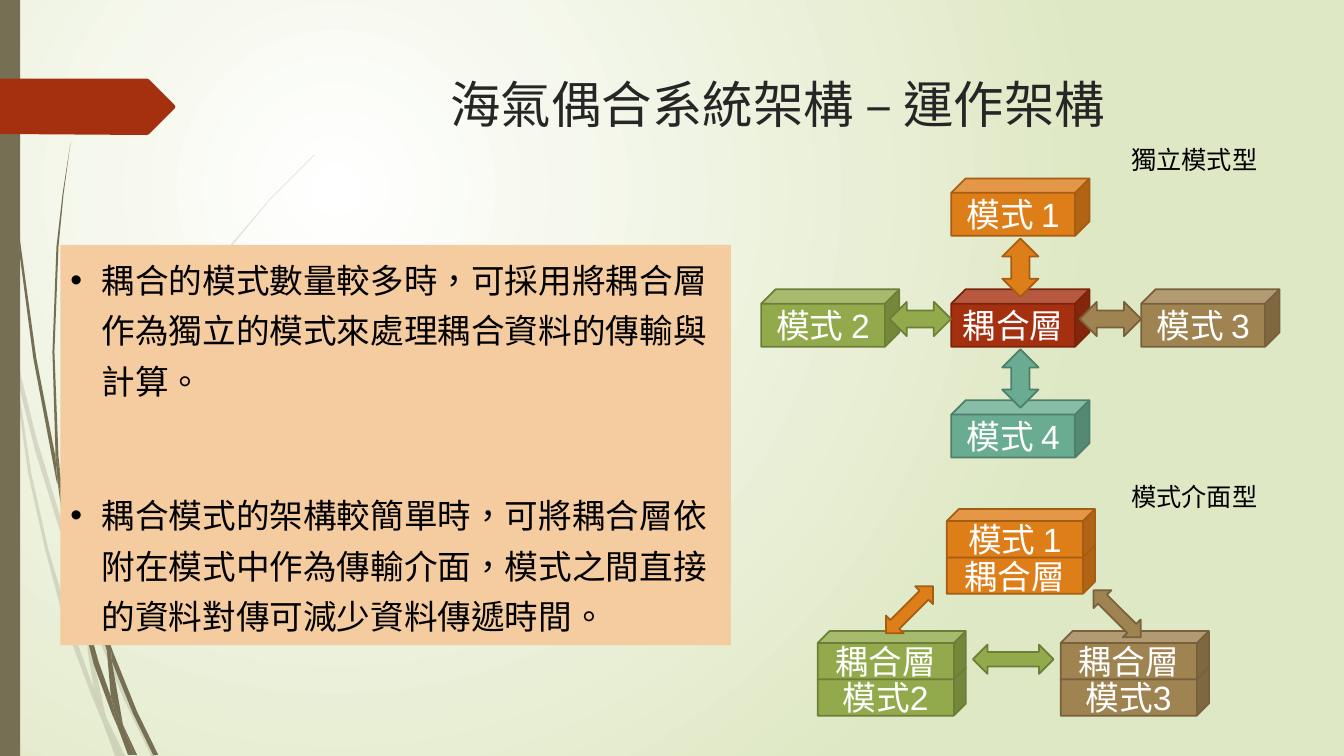
from lxml import etree
from pptx import Presentation
from pptx.dml.color import RGBColor
from pptx.enum.shapes import MSO_SHAPE
from pptx.enum.text import MSO_ANCHOR, PP_ALIGN
from pptx.oxml.ns import qn
from pptx.util import Inches, Pt

CUBE, ARROW, RECTANGLE = MSO_SHAPE.CUBE, MSO_SHAPE.LEFT_RIGHT_ARROW, MSO_SHAPE.RECTANGLE
TOP, MIDDLE = MSO_ANCHOR.TOP, MSO_ANCHOR.MIDDLE
LEFT, CENTER = PP_ALIGN.LEFT, PP_ALIGN.CENTER

# Fill and outline of each model
ORANGE, GREEN, BROWN = ("DE7E18", "A45D12"), ("92AA4C", "6C7E38"), ("9F8351", "76613C")
TEAL, RED = ("6AAC91", "4E7F6B"), ("A53010", "7A240C")
GRASS = "766F54"

# Outlines of the grass blades and the flag, in inches
PALE_BLADES = [
    [(0.11, 3.5), (0.09, 3.22), (0, 2.82), (0, 2.99), (0.1, 3.44)],
    [(0.58, 5.22), (0.84, 5.99), (0.85, 5.86), (0.62, 5.2), (0.36, 4.34), (0.14, 3.45),
     (0.17, 3.76), (0.35, 4.48)],
    [(0.92, 6.07), (0.88, 5.96), (0.88, 6.1), (1.23, 6.94), (1.5, 7.5), (1.55, 7.5), (1.27, 6.92)],
    [(1.19, 7.5), (1.24, 7.5), (1.05, 7.11)],
    [(0.93, 6.83), (0.7, 6.19), (0.48, 5.45), (0.31, 4.69), (0.17, 3.76), (0.11, 3.5), (0.28, 4.7),
     (0.45, 5.46), (0.65, 6.21), (0.92, 6.93), (1.01, 7.14), (0.99, 7.07)],
    [(0.84, 5.99), (0.87, 6.46), (0.93, 6.83), (0.96, 6.92), (1.05, 7.11), (0.91, 6.46),
     (0.88, 6.08)],
    [(0.88, 5.84), (0.95, 5.22), (1.1, 4.62), (1.32, 4.04), (1.6, 3.49), (2.29, 2.45),
     (2.68, 1.98), (3.12, 1.54), (3.12, 1.53), (2.68, 1.97), (2.28, 2.44), (1.58, 3.48),
     (1.3, 4.03), (1.07, 4.61), (0.91, 5.22), (0.85, 5.84), (0.88, 5.96)],
    [(1.01, 7.14), (1.14, 7.5), (1.19, 7.5)],
    [(0.96, 6.92), (0.93, 6.83), (0.99, 7.07), (1.01, 7.14), (1.19, 7.5), (1.05, 7.11)],
]
DARK_BLADES = [
    [(0.07, 1.1), (0.17, 2.33), (0.33, 3.55), (0.56, 4.77), (0.57, 4.81), (0.55, 4.53),
     (0.36, 3.55), (0.19, 2.32), (0.08, 1.09), (0.05, 0.48), (0.04, 0), (0.03, 0), (0.04, 0.48)],
    [(0.88, 5.92), (1.06, 6.45), (1.06, 6.31), (0.93, 5.9), (0.75, 5.32), (0.6, 4.72), (0.64, 5.05)],
    [(1.13, 6.49), (1.1, 6.41), (1.11, 6.56), (1.32, 7.08), (1.52, 7.49), (1.57, 7.49), (1.36, 7.06)],
    [(1.1, 6.91), (0.98, 6.57), (0.84, 6.07), (0.72, 5.56), (0.64, 5.05), (0.57, 4.77),
     (0.68, 5.57), (0.8, 6.08), (0.93, 6.59), (1.11, 7.08), (1.17, 7.22), (1.16, 7.17)],
    [(0.6, 4.72), (0.58, 4.53), (0.54, 3.49), (0.58, 2.45), (0.63, 1.93), (0.7, 1.41),
     (0.62, 1.93), (0.56, 2.45), (0.52, 3.49), (0.55, 4.49)],
    [(1.33, 7.49), (1.36, 7.49), (1.22, 7.19)],
    [(0.57, 4.77), (0.64, 5.05), (0.6, 4.72), (0.55, 4.49), (0.55, 4.53)],
    [(1.11, 6.33), (1.15, 5.92), (1.25, 5.52), (1.58, 4.76), (2.05, 4.06), (2.31, 3.74),
     (2.61, 3.44), (2.6, 3.44), (2.31, 3.73), (2.04, 4.05), (1.56, 4.74), (1.22, 5.51),
     (1.11, 5.91), (1.06, 6.31), (1.1, 6.41)],
    [(1.17, 7.22), (1.27, 7.49), (1.31, 7.49)],
    [(1.06, 6.45), (1.1, 6.91), (1.16, 7.06), (1.22, 7.19), (1.11, 6.56), (1.09, 6.51)],
    [(1.06, 6.45), (1.11, 6.56), (1.1, 6.41), (1.06, 6.31)],
    [(1.16, 7.06), (1.1, 6.91), (1.17, 7.22), (1.3, 7.49), (1.33, 7.49), (1.22, 7.19)],
]
FLAG = [(0, 0.78), (1.46, 0.78), (1.48, 0.79), (1.73, 1.04), (1.74, 1.06), (1.73, 1.08),
        (1.48, 1.33), (1.46, 1.34), (0, 1.33)]

def color(hex_string):
    return RGBColor.from_string(hex_string)

def set_text(shape, *paragraphs, size=24, font="Arial", fill="FFFFFF", align=CENTER,
             anchor=MIDDLE, margins=(0.1, 0.05)):
    frame = shape.text_frame
    frame.word_wrap = True
    frame.vertical_anchor = anchor
    frame.margin_left = frame.margin_right = Inches(margins[0])
    frame.margin_top = frame.margin_bottom = Inches(margins[1])
    frame.text = "\n".join(paragraphs)
    for paragraph in frame.paragraphs:
        paragraph.alignment = align
        run = paragraph.runs[0]
        run.font.size, run.font.name = Pt(size), font
        run.font.color.rgb = color(fill)
        run._r.get_or_add_rPr().set("lang", "zh-TW")
    return frame

def paint(shape, fill, line=None):
    shape.shadow.inherit = False
    shape.fill.solid()
    shape.fill.fore_color.rgb = color(fill)
    if line:
        shape.line.color.rgb = color(line)
        shape.line.width = Pt(1.25)
    else:
        shape.line.fill.background()

def add_preset(slide, kind, box, fill, line=None):
    shape = slide.shapes.add_shape(kind, *map(Inches, box))
    paint(shape, fill, line)
    return shape

def add_outline(slide, points, fill, opacity=None):
    # Points are placed on a grid of hundredths of an inch
    grid = [(round(x * 100), round(y * 100)) for x, y in points]
    builder = slide.shapes.build_freeform(*grid[0], scale=Inches(0.01))
    builder.add_line_segments(grid[1:], close=True)
    shape = builder.convert_to_shape()
    paint(shape, fill)
    if opacity:
        tint = next(shape._element.spPr.iter(qn("a:srgbClr")))
        etree.SubElement(tint, qn("a:alpha"), val=str(opacity * 1000))

def add_cube(slide, box, text, colors):
    set_text(add_preset(slide, CUBE, box, *colors), text, margins=(0, 0))

def add_arrow(slide, center, size, colors, rotation=0):
    box = (center[0] - size[0] / 2, center[1] - size[1] / 2, *size)
    add_preset(slide, ARROW, box, *colors).rotation = rotation

def add_label(slide, box, text):
    label = slide.shapes.add_textbox(*map(Inches, box))
    set_text(label, text, size=18, fill="000000", anchor=TOP)

def add_backdrop(slide):
    # Round gradient spreading from the upper left
    fill = slide.background.fill
    fill.gradient()
    for stop, position, tint in zip(fill.gradient_stops, (0, 1), ("FFFFFF", "DFE8C4")):
        stop.position, stop.color.rgb = position, color(tint)
    gradient = next(slide._element.iter(qn("a:gradFill")))
    circle = etree.Element(qn("a:path"), path="circle")
    etree.SubElement(circle, qn("a:fillToRect"), l="50000", t="50000", r="100000", b="100000")
    gradient.replace(gradient.find(qn("a:lin")), circle)
    # Grass, side band and flag
    for blades, opacity in ((PALE_BLADES, 20), (DARK_BLADES, None)):
        for blade in blades:
            add_outline(slide, blade, GRASS, opacity)
    add_preset(slide, RECTANGLE, (0, 0, 0.2, 7.5), GRASS)
    add_outline(slide, FLAG, RED[0])

def add_title(slide, box, text):
    title = slide.shapes.title
    title.left, title.top, title.width, title.height = map(Inches, box)
    set_text(title, text, size=36, font="Quicksand", fill="262626", anchor=TOP)

def add_explanation(slide, box, *points):
    panel = add_preset(slide, RECTANGLE, box, "F5CBA0")
    frame = set_text(panel, *points, fill="000000", align=LEFT, anchor=TOP)
    for paragraph, gap in zip(frame.paragraphs, (12, 60)):
        paragraph.line_spacing, paragraph.space_before = 1.25, Pt(gap)
        properties = paragraph._p.get_or_add_pPr()
        properties.set("marL", str(Inches(0.31)))
        properties.set("indent", str(-Inches(0.31)))
        etree.SubElement(properties, qn("a:buFont"), typeface="Arial")
        etree.SubElement(properties, qn("a:buChar"), char="•")

def add_hub_diagram(slide, box):
    left, top, width, height = box
    cube_width, cube_height = 1.37, 0.57
    step_x, step_y = (width - cube_width) / 2, (height - cube_height) / 2
    models = [("模式 2", -1, 0, GREEN), ("模式 4", 0, 1, TEAL), ("耦合層", 0, 0, RED),
              ("模式 1", 0, -1, ORANGE), ("模式 3", 1, 0, BROWN)]
    for text, column, row, colors in models:
        place = (left + (column + 1) * step_x, top + (row + 1) * step_y)
        add_cube(slide, (*place, cube_width, cube_height), text, colors)
    # Arrows halfway between the hub and each model
    center_x, center_y = left + width / 2, top + height / 2
    for text, column, row, colors in models:
        if column:
            add_arrow(slide, (center_x + column * step_x / 2 - 0.05, center_y + 0.01),
                      (0.61, 0.34), colors)
        elif row:
            add_arrow(slide, (center_x, center_y + row * step_y / 2 + 0.05),
                      (0.58, 0.36), colors, rotation=90)

def add_interface_diagram(slide, box):
    left, top, width, height = box
    cube_width, cube_height, layer = 1.47, 0.48, 0.36
    base = height - cube_height - layer
    stacks = [("模式 1", "耦合層", 1.28, 0, ORANGE), ("耦合層", "模式2", 0, base, GREEN),
              ("耦合層", "模式3", width - cube_width, base, BROWN)]
    for upper, lower, x, y, colors in stacks:
        for text, drop in ((lower, layer), (upper, 0)):
            add_cube(slide, (left + x, top + y + drop, cube_width, cube_height), text, colors)
    # Arrows between the stacks
    add_arrow(slide, (left + 0.91, top + 1), (0.66, 0.25), ORANGE, rotation=135)
    add_arrow(slide, (left + width / 2, top + 1.49), (0.8, 0.29), GREEN)
    add_arrow(slide, (left + 2.97, top + 1.04), (0.66, 0.25), BROWN, rotation=45)

def main():
    presentation = Presentation()
    presentation.slide_width, presentation.slide_height = Inches(13.33), Inches(7.5)
    slide = presentation.slides.add_slide(presentation.slide_layouts[5])
    add_backdrop(slide)
    add_title(slide, (2.84, 0.68, 9.75, 1.4), "海氣偶合系統架構 – 運作架構")
    add_hub_diagram(slide, (7.55, 1.77, 5.14, 2.77))
    add_interface_diagram(slide, (8.11, 5.05, 3.88, 2.05))
    for text, top in (("獨立模式型", 1.38), ("模式介面型", 4.73)):
        add_label(slide, (10.8, top, 2.09, 0.4), text)
    add_explanation(
        slide, (0.6, 2.43, 6.65, 3.97),
        "耦合的模式數量較多時，可採用將耦合層作為獨立的模式來處理耦合資料的傳輸與計算。",
        "耦合模式的架構較簡單時，可將耦合層依附在模式中作為傳輸介面，模式之間直接的資料對傳可減少資料傳遞時間。")
    presentation.save("out.pptx")

if __name__ == "__main__":
    main()
